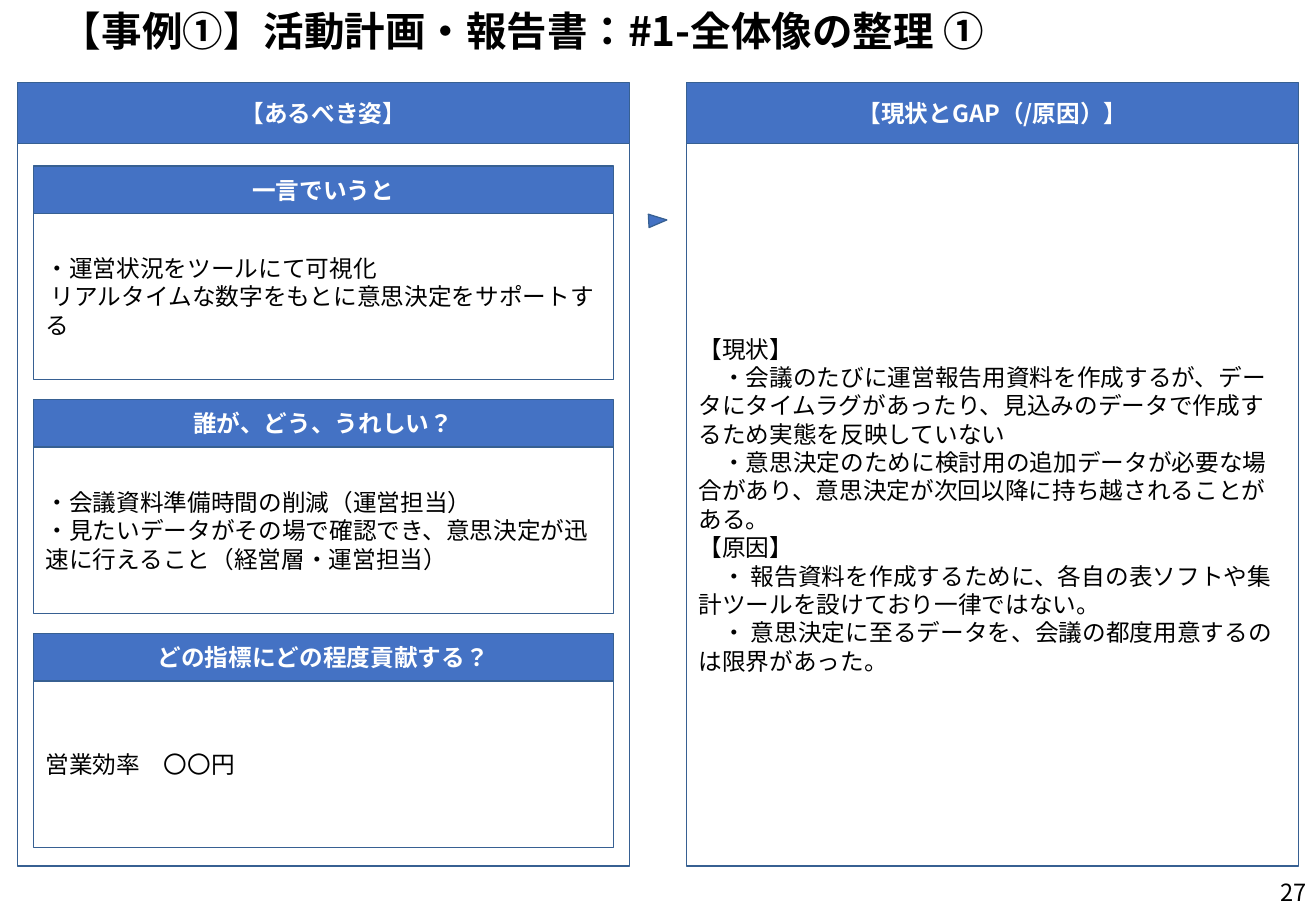
from dataclasses import dataclass

from pptx import Presentation
from pptx.dml.color import RGBColor
from pptx.enum.lang import MSO_LANGUAGE_ID
from pptx.enum.shapes import MSO_SHAPE
from pptx.enum.text import MSO_ANCHOR, PP_ALIGN
from pptx.oxml.ns import qn
from pptx.shapes.autoshape import Shape
from pptx.slide import Slide
from pptx.util import Cm, Pt

COLORS = {"blue": "4472C4", "edge": "376092", "white": "FFFFFF", "black": "000000"}
FONT = "Noto Sans CJK JP"


@dataclass(frozen=True)
class Area:
    left: float
    top: float
    width: float
    height: float


@dataclass(frozen=True)
class Panel:
    area: Area
    header_height: float
    heading: str
    body: tuple[str, ...] = ()


def color(name: str) -> RGBColor:
    return RGBColor.from_string(COLORS[name])


def write(box: Shape, paragraphs: tuple[str, ...], ink: str = "black", size: int = 14,
          bold: bool = False, align: PP_ALIGN = PP_ALIGN.LEFT) -> None:
    frame = box.text_frame
    frame.word_wrap = True
    frame.vertical_anchor = MSO_ANCHOR.MIDDLE
    for index, text in enumerate(paragraphs):
        para = frame.add_paragraph() if index else frame.paragraphs[0]
        para.text = text
        para.alignment = align
        font = para.font
        font.name, font.size, font.bold = FONT, Pt(size), bold
        font.language_id = MSO_LANGUAGE_ID.JAPANESE
        font.color.rgb = color(ink)
        east_asian = para._p.pPr.defRPr.makeelement(qn("a:ea"), {"typeface": FONT})
        para._p.pPr.defRPr.find(qn("a:latin")).addnext(east_asian)


def add_box(page: Slide, area: Area) -> Shape:
    return page.shapes.add_textbox(
        Cm(area.left), Cm(area.top), Cm(area.width), Cm(area.height))


def add_block(page: Slide, area: Area, fill: str,
              kind: MSO_SHAPE = MSO_SHAPE.RECTANGLE) -> Shape:
    block = page.shapes.add_shape(
        kind, Cm(area.left), Cm(area.top), Cm(area.width), Cm(area.height))
    block.shadow.inherit = False
    block.fill.solid()
    block.fill.fore_color.rgb = color(fill)
    block.line.color.rgb = color("edge")
    block.line.width = Pt(0.75)
    return block


def add_panel(page: Slide, panel: Panel) -> None:
    area, split = panel.area, panel.header_height
    header = add_block(page, Area(area.left, area.top, area.width, split), "blue")
    write(header, (panel.heading,), "white", bold=True, align=PP_ALIGN.CENTER)
    body = add_block(
        page, Area(area.left, area.top + split, area.width, area.height - split), "white")
    write(body, panel.body)


GAP_TEXT = (
    "【現状】\n"
    "　・会議のたびに運営報告用資料を作成するが、データにタイムラグがあったり、"
    "見込みのデータで作成するため実態を反映していない\n"
    "　・意思決定のために検討用の追加データが必要な場合があり、"
    "意思決定が次回以降に持ち越されることがある。\n"
    "【原因】\n"
    "　・ 報告資料を作成するために、各自の表ソフトや集計ツールを設けており一律ではない。",
    "　・ 意思決定に至るデータを、会議の都度用意するのは限界があった。",
)
GOALS = (
    ("一言でいうと",
     ("・運営状況をツールにて可視化",
      " リアルタイムな数字をもとに意思決定をサポートする")),
    ("誰が、どう、うれしい？",
     ("・会議資料準備時間の削減（運営担当）",
      "・見たいデータがその場で確認でき、意思決定が迅速に行えること（経営層・運営担当）")),
    ("どの指標にどの程度貢献する？", ("営業効率　〇〇円",)),
)
GOAL_TOP, GOAL_STEP = 3.47, 4.89
PANELS = [
    Panel(Area(14.35, 1.73, 12.8, 16.38), 1.27, "【現状とGAP（/原因）】", GAP_TEXT),
    Panel(Area(0.36, 1.73, 12.8, 16.38), 1.27, "【あるべき姿】"),
] + [
    Panel(Area(0.7, GOAL_TOP + row * GOAL_STEP, 12.12, 4.47), 0.99, heading, body)
    for row, (heading, body) in enumerate(GOALS)
]


def main() -> None:
    deck = Presentation()
    deck.slide_width, deck.slide_height = Cm(27.51), Cm(19.05)
    page = deck.slides.add_slide(deck.slide_layouts[6])

    number = add_box(page, Area(21.13, 18.14, 6.43, 1.02))
    write(number, ("27",), align=PP_ALIGN.RIGHT)
    title = add_box(page, Area(0.18, 0, 27.18, 1.27))
    write(title, ("　【事例①】活動計画・報告書：#1-全体像の整理 ①",), size=24, bold=True)

    for panel in PANELS:
        add_panel(page, panel)
    arrow = add_block(page, Area(13.61, 4.42, 0.28, 0.38), "blue",
                      MSO_SHAPE.ISOSCELES_TRIANGLE)
    arrow.rotation = 87

    deck.save("out.pptx")


if __name__ == "__main__":
    main()
